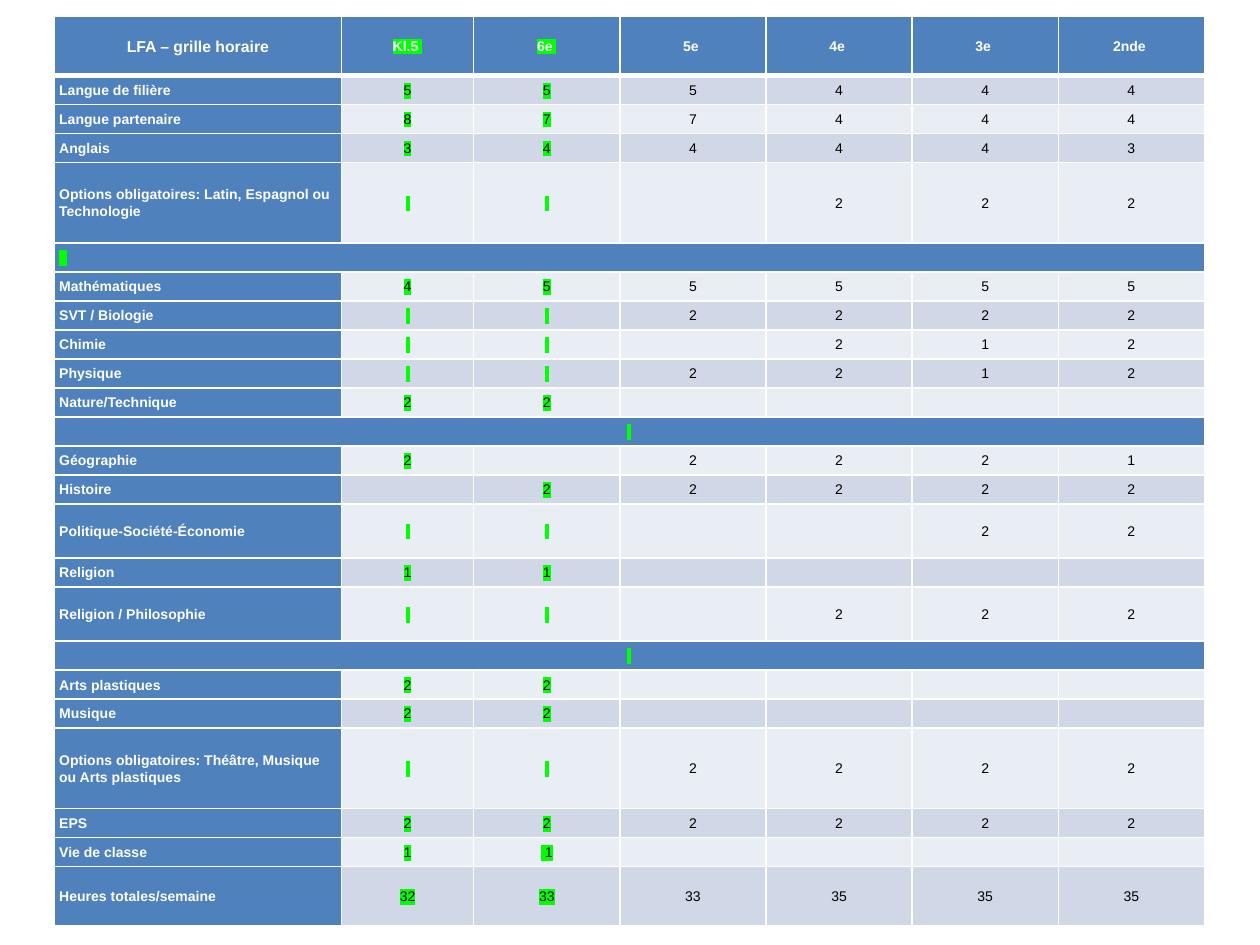
from pptx import Presentation, util as u
from pptx.dml.color import RGBColor
from pptx.enum import text
from pptx.oxml import ns
from lxml import etree

THEME = {
    "font": "Arial", "title_size": 9, "body_size": 8,
    "blue": "4F81BD", "bands": ("E9EDF4", "D0D8E8"),
    "light_text": "FFFFFF", "dark_text": "000000",
    "border": "FFFFFF", "highlight": "00FF00",
}
BLANK = chr(160)  # non-breaking space that carries a visible highlight
ROW_HEIGHT = 0.23
COLUMN_WIDTHS = [2.28, 1.05] + [1.16] * 5
TALL_ROWS = {
    "LFA – grille horaire": 0.47,
    "Options obligatoires: Latin, Espagnol ou Technologie": 0.64,
    "Politique-Société-Économie": 0.43,
    "Religion / Philosophie": 0.43,
    "Options obligatoires: Théâtre, Musique ou Arts plastiques": 0.64,
    "Heures totales/semaine": 0.47,
}
# A row with a single entry is a divider across all columns.
ROWS = [
    ["LFA – grille horaire", "Kl.5 ", "6e ", "5e ", "4e ", "3e ", "2nde "],
    ["Langue de filière", "5", "5", "5", "4", "4", "4"],
    ["Langue partenaire", "8", "7", "7", "4", "4", "4"],
    ["Anglais", "3", "4", "4", "4", "4", "3"],
    ["Options obligatoires: Latin, Espagnol ou Technologie", BLANK, BLANK, "", "2", "2", "2"],
    [BLANK * 2],
    ["Mathématiques", "4", "5", "5", "5", "5", "5"],
    ["SVT / Biologie", BLANK, BLANK, "2", "2", "2", "2"],
    ["Chimie", BLANK, BLANK, "", "2", "1", "2"],
    ["Physique", BLANK, BLANK, "2", "2", "1", "2"],
    ["Nature/Technique", "2", "2", "", "", "", ""],
    [BLANK],
    ["Géographie", "2", "", "2", "2", "2", "1"],
    ["Histoire", "", "2", "2", "2", "2", "2"],
    ["Politique-Société-Économie", BLANK, BLANK, "", "", "2", "2"],
    ["Religion", "1", "1", "", "", "", ""],
    ["Religion / Philosophie", BLANK, BLANK, "", "2", "2", "2"],
    [BLANK],
    ["Arts plastiques", "2", "2", "", "", "", ""],
    ["Musique", "2", "2", "", "", "", ""],
    ["Options obligatoires: Théâtre, Musique ou Arts plastiques", BLANK, BLANK, "2", "2", "2", "2"],
    ["EPS", "2", "2", "2", "2", "2", "2"],
    ["Vie de classe", "1", BLANK + "1", "", "", "", ""],
    ["Heures totales/semaine", "32", "33", "33", "35", "35", "35"],
]
CELL_FORMAT = {
    "margin_left": u.Inches(0.04), "margin_right": u.Inches(0.04),
    "margin_top": 0, "margin_bottom": 0,
    "vertical_anchor": text.MSO_ANCHOR.MIDDLE,
}


def add_color(parent, tag, color):
    element = etree.SubElement(parent, ns.qn(tag))
    etree.SubElement(element, ns.qn("a:srgbClr"), val=color)
    return element


def set_borders(cell, top, bottom):
    """Draw all four cell borders; top and bottom widths are in points."""
    properties = cell._tc.get_or_add_tcPr()
    for side, width in {"L": 1, "R": 1, "T": top, "B": bottom}.items():
        line = etree.SubElement(properties, ns.qn(f"a:ln{side}"), w=str(u.Pt(width)))
        add_color(line, "a:solidFill", THEME["border"])


presentation = Presentation()
presentation.slide_width = u.Inches(10)
presentation.slide_height = u.Inches(7.5)
slide = presentation.slides.add_slide(presentation.slide_layouts[6])

heights = [TALL_ROWS.get(row[0], ROW_HEIGHT) for row in ROWS]
table = slide.shapes.add_table(
    len(ROWS), len(COLUMN_WIDTHS), u.Inches(0.43), u.Inches(0.13),
    u.Inches(sum(COLUMN_WIDTHS)), u.Inches(sum(heights))).table
table.first_row = table.horz_banding = False
for column, width in zip(table.columns, COLUMN_WIDTHS):
    column.width = u.Inches(width)
for row, height in zip(table.rows, heights):
    row.height = u.Inches(height)

for row_index, entries in enumerate(ROWS):
    is_divider = len(entries) == 1
    if is_divider:
        table.cell(row_index, 0).merge(table.cell(row_index, len(COLUMN_WIDTHS) - 1))
    for column_index, entry in enumerate(entries):
        cell = table.cell(row_index, column_index)
        is_heading = row_index == 0 or column_index == 0
        for name, value in CELL_FORMAT.items():
            setattr(cell, name, value)
        set_borders(cell, 3 if row_index == 1 else 1, 3 if row_index == 0 else 1)
        cell.fill.solid()
        fill = THEME["blue"] if is_heading else THEME["bands"][row_index % 2]
        cell.fill.fore_color.rgb = RGBColor.from_string(fill)

        paragraph = cell.text_frame.paragraphs[0]
        paragraph.line_spacing = 1.07
        centered = row_index == 0 or column_index > 0 or entry == BLANK
        paragraph.alignment = text.PP_ALIGN.CENTER if centered else text.PP_ALIGN.LEFT
        size = THEME["title_size" if row_index == column_index == 0 else "body_size"]
        if not entry:
            # Keeps an empty cell from stretching its row.
            etree.SubElement(paragraph._p, ns.qn("a:endParaRPr"), sz=str(size * 100))
            continue
        run = paragraph.add_run()
        run.text = entry
        font_format = {"name": THEME["font"], "size": u.Pt(size), "bold": is_heading}
        for name, value in font_format.items():
            setattr(run.font, name, value)
        color = THEME["light_text" if is_heading else "dark_text"]
        run.font.color.rgb = RGBColor.from_string(color)
        if is_divider or column_index in (1, 2):
            run_properties = run._r.get_or_add_rPr()
            highlight = add_color(run_properties, "a:highlight", THEME["highlight"])
            run_properties.find(ns.qn("a:solidFill")).addnext(highlight)

presentation.save("out.pptx")
